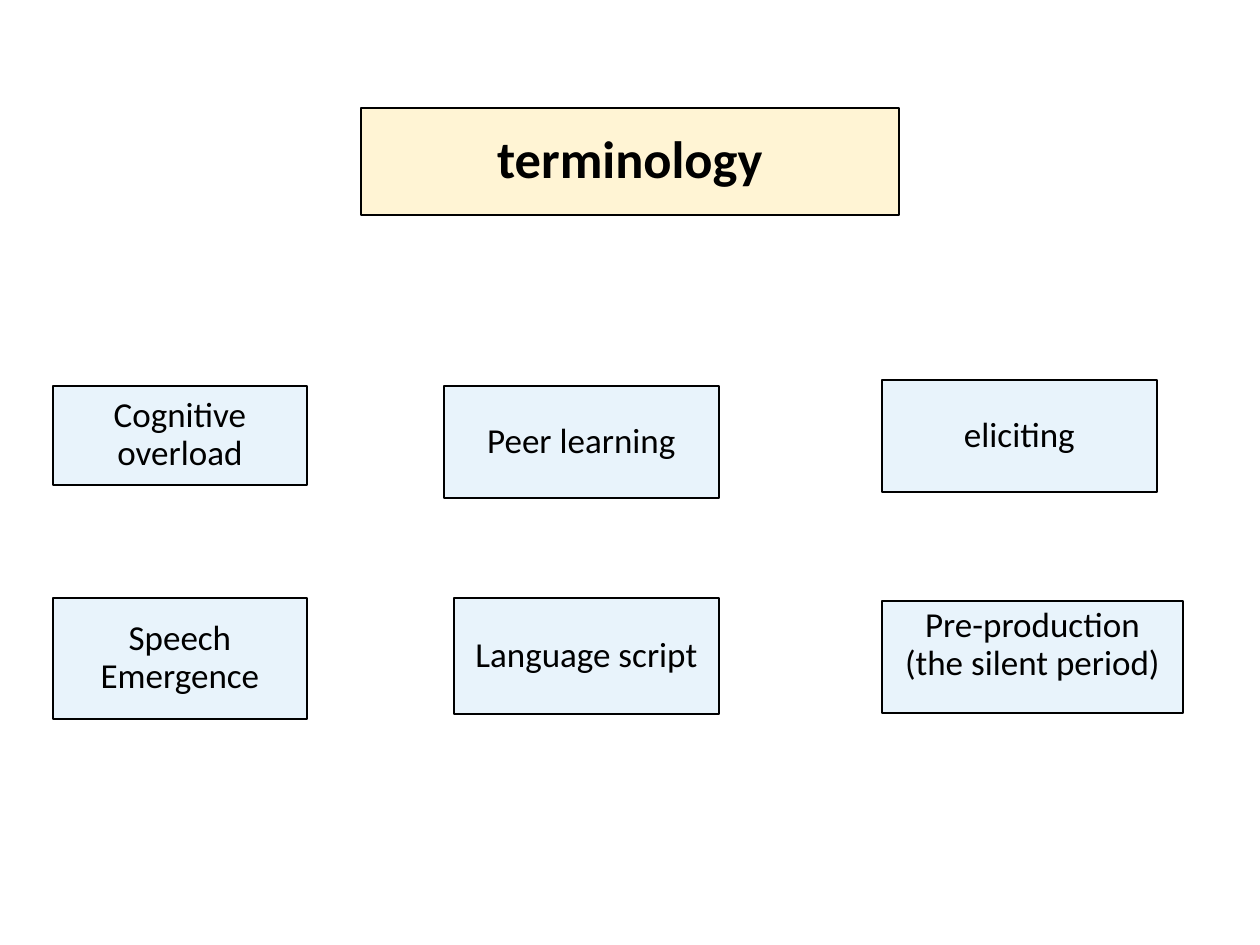
from dataclasses import dataclass

from pptx import Presentation
from pptx.dml.color import RGBColor
from pptx.enum.shapes import MSO_SHAPE as Shape
from pptx.enum.text import MSO_ANCHOR as Anchor, PP_ALIGN as Align
from pptx.util import Emu, Pt

PX_PER_INCH = 126


@dataclass(frozen=True)
class Theme:
    font: str = "Calibri"
    ink: str = "000000"
    title_fill: str = "FFF4D4"
    term_fill: str = "E8F3FB"
    title_size: int = 30
    term_size: int = 20
    line_width: float = 0.75
    line_spacing: float = 0.9


THEME = Theme()


def px(length):
    return Emu(round(length * 914400 / PX_PER_INCH))


def write_text(shape, text, size, bold=False, anchor=Anchor.MIDDLE):
    frame = shape.text_frame
    frame.word_wrap = True
    frame.vertical_anchor = anchor
    para = frame.paragraphs[0]
    para.alignment = Align.CENTER
    para.line_spacing = THEME.line_spacing
    span = para.add_run()
    span.text = text
    span.font.name = THEME.font
    span.font.size = Pt(size)
    span.font.bold = bold
    span.font.color.rgb = RGBColor.from_string(THEME.ink)


def add_card(page, box, fill, text, **text_format):
    card = page.shapes.add_shape(Shape.RECTANGLE, *map(px, box))
    card.shadow.inherit = False
    card.fill.solid()
    card.fill.fore_color.rgb = RGBColor.from_string(fill)
    card.line.color.rgb = RGBColor.from_string(THEME.ink)
    card.line.width = Pt(THEME.line_width)
    write_text(card, text, **text_format)


def add_title(page, box):
    add_card(page, box, THEME.title_fill, "terminology",
             size=THEME.title_size, bold=True)


def add_terms(page, box):
    left, top = box[:2]
    # Text, offset from the region's corner, size, anchor
    terms = [
        ("Cognitive overload", 0, 6, 254, 99, Anchor.MIDDLE),
        ("Peer learning", 391, 6, 275, 112, Anchor.MIDDLE),
        ("eliciting", 829, 0, 275, 112, Anchor.MIDDLE),
        ("Speech Emergence", 0, 218, 254, 121, Anchor.MIDDLE),
        ("Language script", 401, 218, 265, 116, Anchor.MIDDLE),
        ("Pre-production (the silent period)", 829, 221, 301, 112, Anchor.TOP),
    ]
    for text, x, y, width, height, anchor in terms:
        add_card(page, (left + x, top + y, width, height), THEME.term_fill,
                 text, size=THEME.term_size, anchor=anchor)


def main():
    deck = Presentation()
    deck.slide_width, deck.slide_height = px(1260), px(945)
    page = deck.slides.add_slide(deck.slide_layouts[6])
    add_title(page, (361, 108, 538, 107))
    add_terms(page, (53, 380, 1130, 339))
    deck.save("out.pptx")


if __name__ == "__main__":
    main()
